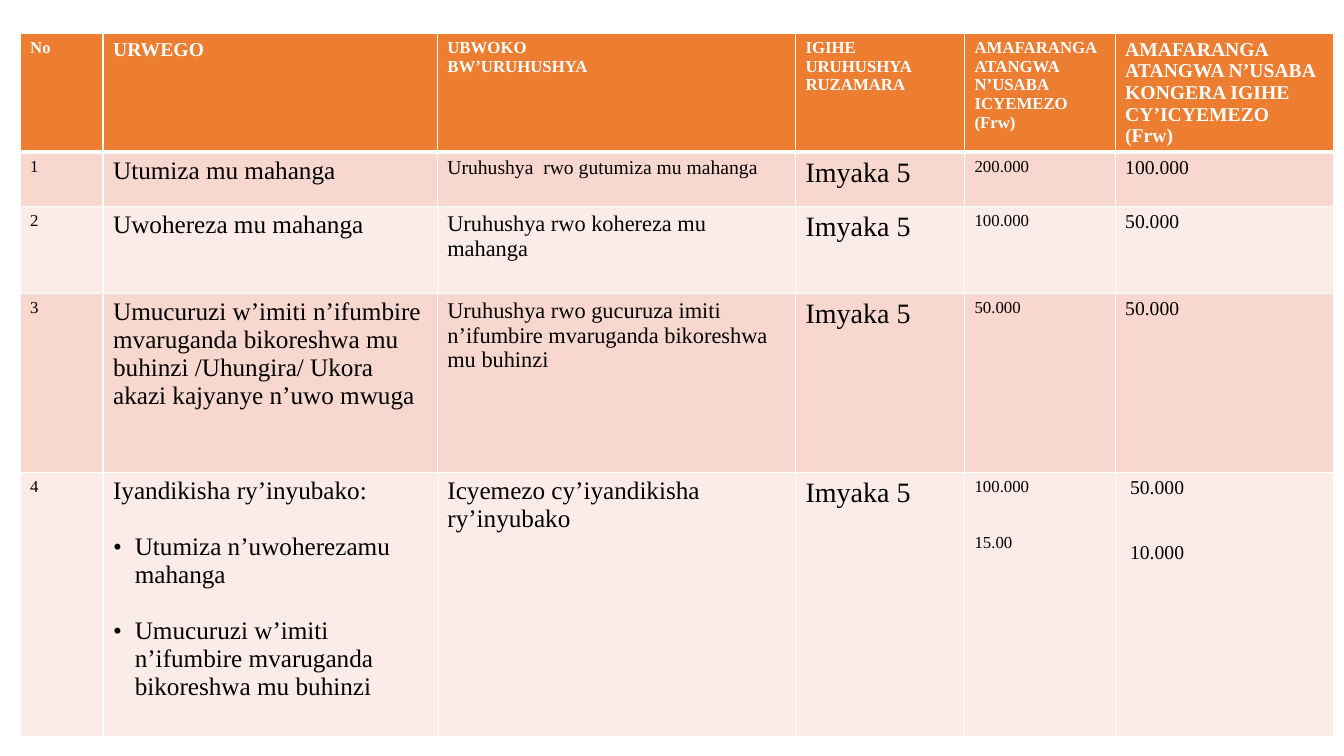
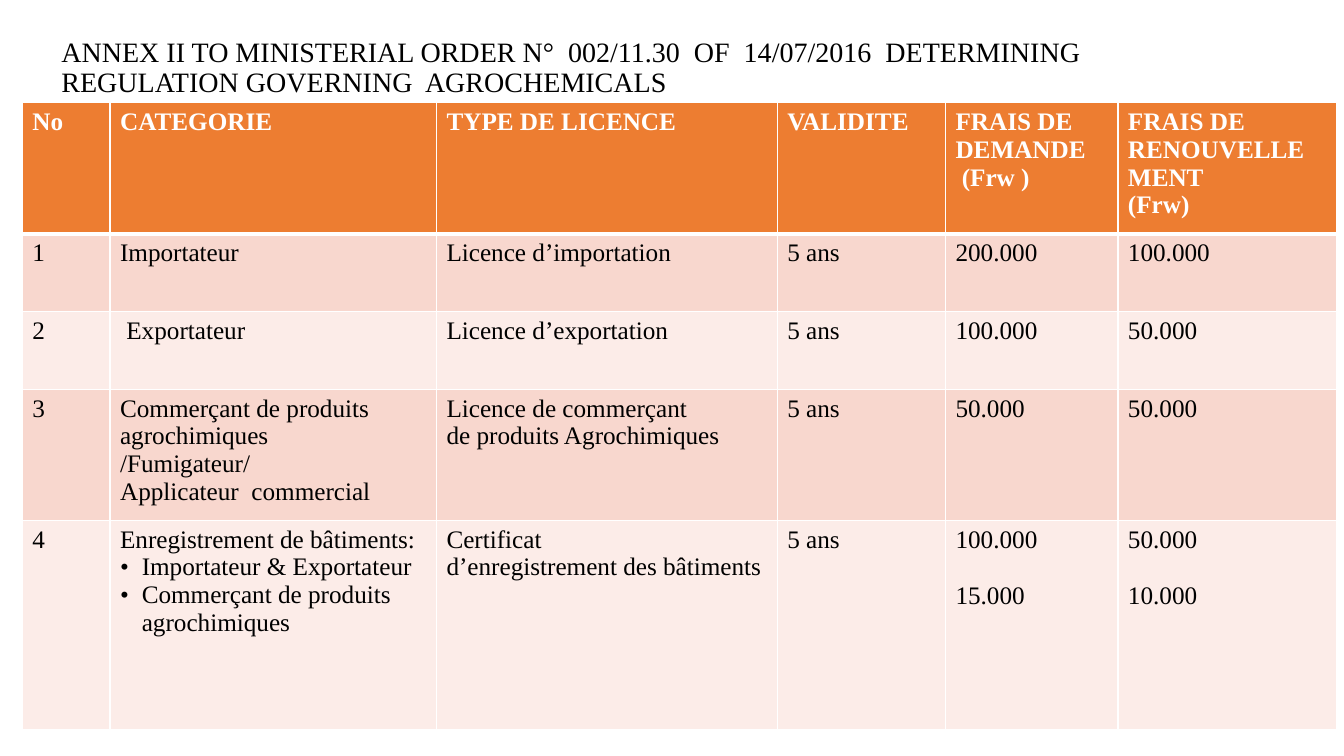
import pptx
import pptx.dml.color
import pptx.enum.text
import pptx.oxml.ns
import pptx.util
from lxml import etree

Pt = pptx.util.Pt
RGB = pptx.dml.color.RGBColor
qn = pptx.oxml.ns.qn

FONT = "Times New Roman"
WHITE = RGB(0xFF, 0xFF, 0xFF)
BLACK = RGB(0, 0, 0)
ORANGE = RGB(0xED, 0x7D, 0x31)
BANDS = (RGB(0xF8, 0xD7, 0xCE), RGB(0xFC, 0xEC, 0xE8))
BULLET = "• "
INDENT = 15.5

TITLE = ("ANNEX II TO MINISTERIAL ORDER N°  002/11.30  OF  14/07/2016  "
         "DETERMINING REGULATION GOVERNING  AGROCHEMICALS")

RW_COLS = (59.2, 238.8, 255.8, 120.8, 107.6, 156.2)
RW_ROWS = (83, 38.8, 62, 128, 188.6)
RW_SIZES = (
    (12, 14, 12, 12, 12, 14),
    (12, 18, 14, 20, 12, 14),
    (12, 18, 16, 20, 12, 14),
    (12, 18, 16, 20, 12, 14),
    (12, 18, 18, 20, 12, 14),
)
RW_CELLS = (
    ("No", "URWEGO", "UBWOKO\nBW’URUHUSHYA", "IGIHE URUHUSHYA\nRUZAMARA",
     "AMAFARANGA\nATANGWA N’USABA\nICYEMEZO\n(Frw)",
     "AMAFARANGA\nATANGWA N’USABA\nKONGERA IGIHE\nCY’ICYEMEZO\n(Frw)"),
    ("1", "Utumiza mu mahanga", "Uruhushya  rwo gutumiza mu mahanga",
     "Imyaka 5", "200.000", "100.000"),
    ("2", "Uwohereza mu mahanga", "Uruhushya rwo kohereza mu mahanga",
     "Imyaka 5", "100.000", "50.000"),
    ("3", "Umucuruzi w’imiti n’ifumbire mvaruganda bikoreshwa mu buhinzi "
     "/Uhungira/ Ukora akazi kajyanye n’uwo mwuga",
     "Uruhushya rwo gucuruza imiti n’ifumbire mvaruganda bikoreshwa mu buhinzi",
     "Imyaka 5", "50.000", "50.000"),
    ("4", "Iyandikisha ry’inyubako:\n• Utumiza n’uwoherezamu mahanga\n"
     "• Umucuruzi w’imiti n’ifumbire mvaruganda bikoreshwa mu buhinzi",
     "Icyemezo cy’iyandikisha ry’inyubako", "Imyaka 5",
     "100.000\n15.00", " 50.000\n 10.000"),
)
RW_GAPS = {(4, 1): 20, (4, 4): 26.6, (4, 5): 31}

FR_COLS = (62.6, 233.2, 243.4, 120.2, 123.2, 156.2)
FR_ROWS = (88, 55.6, 55.6, 87.8, 149)
FR_SIZES = ((18,) * 6,) * 5
FR_CELLS = (
    ("No", "CATEGORIE", "TYPE DE LICENCE", "VALIDITE",
     "FRAIS DE DEMANDE\n (Frw )", "FRAIS DE\nRENOUVELLEMENT\n(Frw)"),
    ("1", "Importateur", "Licence d’importation", "5 ans", "200.000", "100.000"),
    ("2", " Exportateur", "Licence d’exportation", "5 ans", "100.000", "50.000"),
    ("3", "Commerçant de produits\nagrochimiques\n/Fumigateur/\n"
     "Applicateur  commercial",
     "Licence de commerçant\nde produits Agrochimiques",
     "5 ans", "50.000", "50.000"),
    ("4", "Enregistrement de bâtiments:\n• Importateur & Exportateur\n"
     "• Commerçant de produits agrochimiques",
     "Certificat\nd’enregistrement des bâtiments", "5 ans",
     "100.000\n15.000", "50.000\n10.000"),
)
FR_GAPS = {(4, 4): 20, (4, 5): 20}


def add_run(para, text, size, color, bold=False):
    run = para.add_run()
    run.text = text
    font = run.font
    font.name = FONT
    font.size = Pt(size)
    font.bold = bold
    font.color.rgb = color


def set_mark(para):
    props = para._p.get_or_add_pPr()
    props.set("marL", str(Pt(INDENT)))
    props.set("indent", str(-Pt(INDENT)))
    face = etree.SubElement(props, qn("a:buFont"))
    face.set("typeface", FONT)
    etree.SubElement(props, qn("a:buChar")).set("char", BULLET.strip())


def add_lines(frame, text, size, color, bold, gap):
    for pos, line in enumerate(text.split("\n")):
        para = frame.add_paragraph() if pos else frame.paragraphs[0]
        if pos and gap:
            para.space_before = Pt(gap)
        if line.startswith(BULLET):
            set_mark(para)
        add_run(para, line.removeprefix(BULLET), size, color, bold)


def set_edges(cell, row):
    props = cell._tc.get_or_add_tcPr()
    widths = {"L": 1, "R": 1, "T": 3 if row == 1 else 1, "B": 1 if row else 3}
    for side, width in widths.items():
        edge = etree.SubElement(props, qn("a:ln" + side))
        edge.set("w", str(Pt(width)))
        fill = etree.SubElement(edge, qn("a:solidFill"))
        etree.SubElement(fill, qn("a:srgbClr")).set("val", str(WHITE))


def add_grid(slide, left, top, cols, rows, cells, sizes, gaps):
    frame = slide.shapes.add_table(len(rows), len(cols), Pt(left), Pt(top),
                                   Pt(sum(cols)), Pt(sum(rows)))
    table = frame.table
    for col, width in zip(table.columns, cols):
        col.width = Pt(width)
    for row, height in enumerate(rows):
        table.rows[row].height = Pt(height)
        for col, text in enumerate(cells[row]):
            cell = table.cell(row, col)
            set_edges(cell, row)
            cell.fill.solid()
            cell.fill.fore_color.rgb = BANDS[(row - 1) % 2] if row else ORANGE
            add_lines(cell.text_frame, text, sizes[row][col],
                      BLACK if row else WHITE, row == 0,
                      gaps.get((row, col), 0))


def add_title(slide, text):
    box = slide.shapes.add_textbox(Pt(36.8), Pt(4.4), Pt(857.6), Pt(89.2))
    frame = box.text_frame
    frame.word_wrap = True
    frame.vertical_anchor = pptx.enum.text.MSO_ANCHOR.MIDDLE
    para = frame.paragraphs[0]
    para.line_spacing = 0.9
    add_run(para, text, 20, BLACK)


def main():
    deck = pptx.Presentation()
    deck.slide_width = Pt(960)
    deck.slide_height = Pt(540)
    blank = deck.slide_layouts[6]

    slide = deck.slides.add_slide(blank)
    add_grid(slide, 14.4, 24, RW_COLS, RW_ROWS, RW_CELLS, RW_SIZES, RW_GAPS)

    slide = deck.slides.add_slide(blank)
    add_title(slide, TITLE)
    add_grid(slide, 16, 73.4, FR_COLS, FR_ROWS, FR_CELLS, FR_SIZES, FR_GAPS)

    deck.save("out.pptx")


if __name__ == "__main__":
    main()
